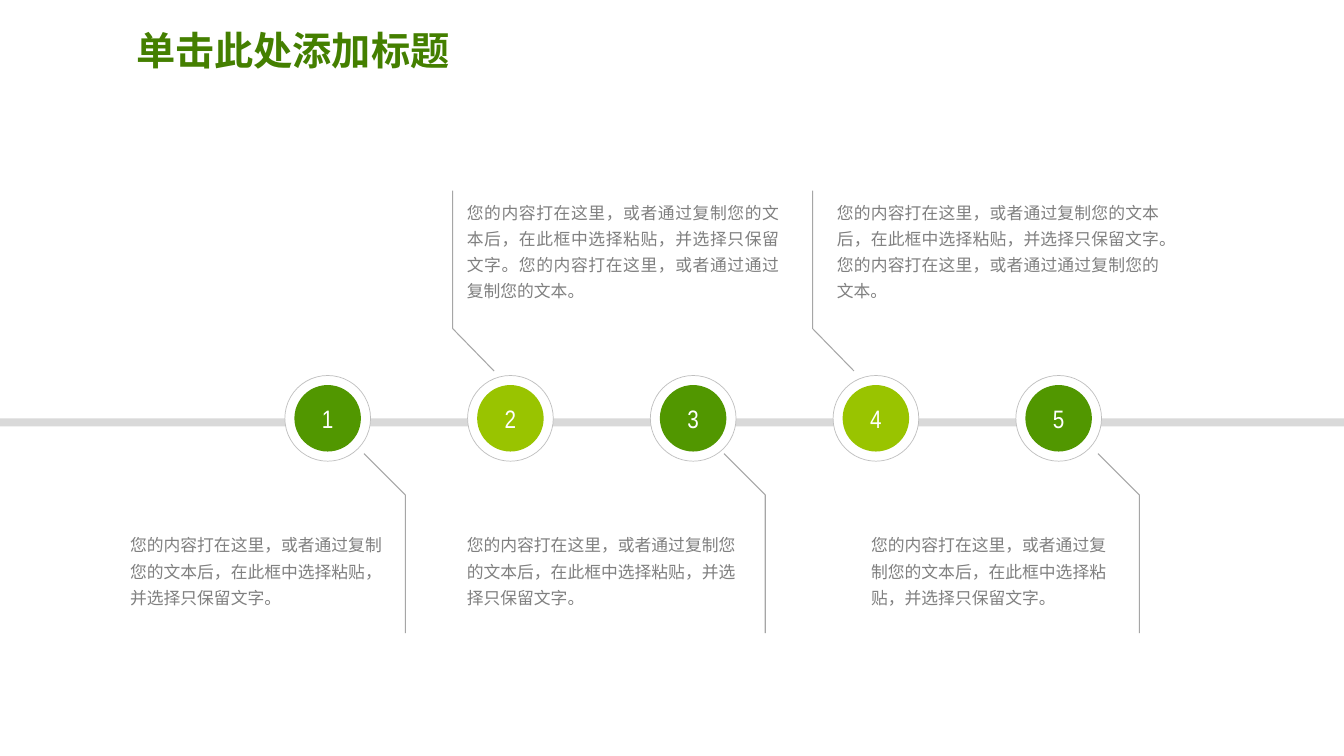
from lxml.etree import SubElement
from pptx import Presentation
from pptx.dml.color import RGBColor
from pptx.enum.shapes import MSO_SHAPE
from pptx.enum.text import MSO_ANCHOR, PP_ALIGN
from pptx.oxml.ns import qn
from pptx.util import Inches, Pt

CJK_FONT = "Noto Sans CJK SC"
SHORT_TEXT = "您的内容打在这里，或者通过复制您的文本后，在此框中选择粘贴，并选择只保留文字。"
LONG_TEXT = SHORT_TEXT + "您的内容打在这里，或者通过通过复制您的文本。"


def color(value):
    return RGBColor.from_string(value)


def write(frame, text, size, ink, font=CJK_FONT, bold=False,
          align=PP_ALIGN.LEFT, spacing=1.0, anchor=MSO_ANCHOR.TOP,
          margins=(0.11, 0.06)):
    frame.word_wrap = True
    frame.vertical_anchor = anchor
    frame.margin_left = frame.margin_right = Inches(margins[0])
    frame.margin_top = frame.margin_bottom = Inches(margins[1])
    para = frame.paragraphs[0]
    para.alignment = align
    para.line_spacing = spacing
    span = para.add_run()
    span.text = text
    span.font.name = font
    span.font.size = Pt(size)
    span.font.bold = bold
    span.font.color.rgb = color(ink)
    east_asian = SubElement(span.font._element, qn("a:ea"))
    east_asian.set("typeface", CJK_FONT)


class TimelinePage:
    GREENS = ("519700", "99C400")
    RAIL = "D9D9D9"
    RING = "BFBFBF"
    LEADER = "A6A6A6"
    BODY = "808080"
    TITLE = "447F00"
    WHITE = "FFFFFF"

    def __init__(self, deck):
        self.page = deck.slides.add_slide(deck.slide_layouts[5])
        self.shapes = self.page.shapes

    def title(self, text):
        box = self.shapes.title
        box.left, box.top = Inches(1.25), Inches(0.1)
        box.width, box.height = Inches(11.5), Inches(0.85)
        write(box.text_frame, text, 28, self.TITLE, font="Montserrat", bold=True,
              spacing=0.9, anchor=MSO_ANCHOR.MIDDLE, margins=(0.1, 0.05))

    def shape(self, kind, left, top, width, height, fill, line=None):
        shape = self.shapes.add_shape(
            kind, Inches(left), Inches(top), Inches(width), Inches(height))
        shape.shadow.inherit = False
        shape.fill.solid()
        shape.fill.fore_color.rgb = color(fill)
        if line:
            shape.line.color.rgb = color(line)
            shape.line.width = Pt(0.5)
        else:
            shape.line.fill.background()
        return shape

    def rail(self):
        self.shape(MSO_SHAPE.RECTANGLE, 0, 4.15, 13.33, 0.08, self.RAIL)

    def circle(self, center, diameter, fill, line=None):
        radius = diameter / 2
        return self.shape(MSO_SHAPE.OVAL, center - radius, 4.15 - radius,
                          diameter, diameter, fill, line)

    def milestone(self, number, center):
        self.circle(center, 0.85, self.WHITE, self.RING)
        disc = self.circle(center, 0.66, self.GREENS[(number - 1) % 2])
        write(disc.text_frame, str(number), 18, self.WHITE, font="Arial Narrow",
              align=PP_ALIGN.CENTER, anchor=MSO_ANCHOR.MIDDLE)

    def leader(self, x, above):
        edge, bend, tip, lean = (1.89, 3.26, 3.68, 0.41) if above else (6.28, 4.91, 4.5, -0.41)
        builder = self.shapes.build_freeform(Inches(x), Inches(edge))
        builder.add_line_segments(
            [(Inches(x), Inches(bend)), (Inches(x + lean), Inches(tip))], close=False)
        line = builder.convert_to_shape()
        line.shadow.inherit = False
        line.fill.background()
        line.line.color.rgb = color(self.LEADER)
        line.line.width = Pt(0.75)

    def caption(self, left, width, above):
        top, height = (1.89, 1.16) if above else (5.19, 0.9)
        box = self.shapes.add_textbox(
            Inches(left), Inches(top), Inches(width), Inches(height))
        write(box.text_frame, LONG_TEXT if above else SHORT_TEXT, 12, self.BODY,
              align=PP_ALIGN.JUSTIFY if above else PP_ALIGN.LEFT, spacing=1.3)


def main():
    deck = Presentation()
    deck.slide_width, deck.slide_height = Inches(13.33), Inches(7.5)
    timeline = TimelinePage(deck)
    timeline.title("单击此处添加标题")
    timeline.rail()
    steps = [
        (4.02, 1.18, 2.85),
        (4.49, 4.52, 3.32),
        (7.59, 4.52, 2.95),
        (8.06, 8.19, 3.42),
        (11.3, 8.53, 2.69),
    ]
    for index, (leader_x, caption_left, caption_width) in enumerate(steps):
        above = index % 2 == 1
        timeline.milestone(index + 1, 3.25 + index * 1.8125)
        timeline.leader(leader_x, above)
        timeline.caption(caption_left, caption_width, above)
    deck.save("out.pptx")


if __name__ == "__main__":
    main()
